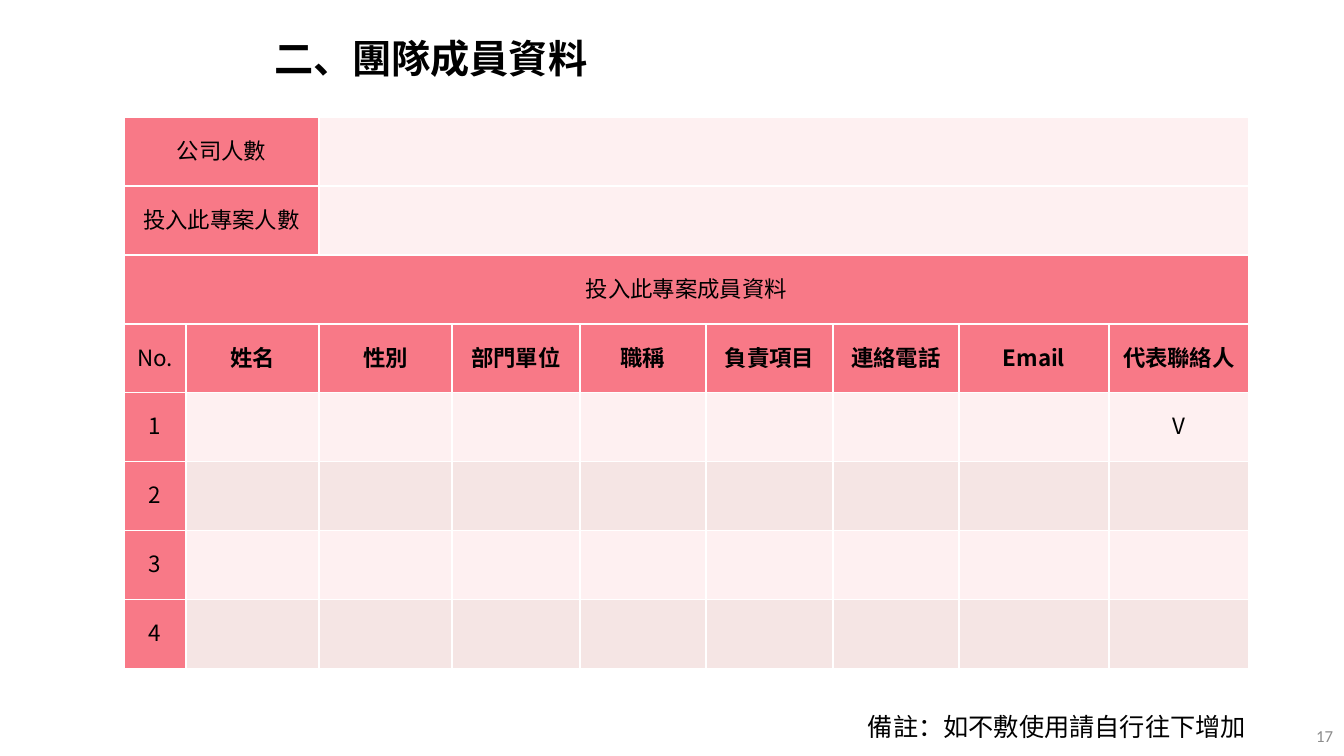
"""Build the team member information slide."""
from lxml.etree import SubElement
from pptx import Presentation
from pptx.dml.color import RGBColor
from pptx.enum.text import MSO_ANCHOR, MSO_AUTO_SIZE, PP_ALIGN
from pptx.oxml.ns import qn
from pptx.util import Emu, Pt

TITLE = "二、團隊成員資料"
NOTE = "備註：如不敷使用請自行往下增加"
PAGE_NUMBER = "17"
HEADCOUNTS = ["公司人數", "投入此專案人數"]
MEMBERS_HEADING = "投入此專案成員資料"
FIELDS = ["No.", "姓名", "性別", "部門單位", "職稱", "負責項目", "連絡電話", "Email", "代表聯絡人"]
MEMBERS = [[str(number)] + [""] * 8 for number in range(1, 5)]
MEMBERS[0][-1] = "V"

COLUMN_WIDTHS = [62, 133, 133, 128, 126, 127, 126, 150, 140]
ROW_HEIGHT = 69
CJK_FONT = "Noto Sans CJK SC"
COLORS = {
    "text": "000000",
    "page": "8C8C8C",
    "header": "F87987",
    "light": "FEF0F1",
    "dark": "F5E5E4",
    "border": "FFFFFF",
}


def px(length):
    return Emu(round(length * 12192000 / 1344))


def place(box, left, top, width, height):
    box.left, box.top, box.width, box.height = map(px, (left, top, width, height))


def write(frame, text, size, color="text", font=CJK_FONT, bold=False, align=PP_ALIGN.LEFT):
    frame.text = text
    paragraph = frame.paragraphs[0]
    paragraph.alignment = align
    for run in paragraph.runs:
        run.font.size = Pt(size)
        run.font.name = font
        run.font.bold = bold
        run.font.color.rgb = RGBColor.from_string(COLORS[color])
        SubElement(run.font._element, qn("a:ea"), typeface=font)
    return paragraph


def fit_on_one_line(frame):
    frame.word_wrap = False
    frame.auto_size = MSO_AUTO_SIZE.SHAPE_TO_FIT_TEXT
    frame.vertical_anchor = MSO_ANCHOR.TOP


def style_cell(cell, text, fill, bold):
    properties = cell._tc.get_or_add_tcPr()
    for side in ("lnL", "lnR", "lnT", "lnB"):
        line = SubElement(properties, qn(f"a:{side}"), w=str(Pt(1)))
        line_fill = SubElement(line, qn("a:solidFill"))
        SubElement(line_fill, qn("a:srgbClr"), val=COLORS["border"])
    cell.fill.solid()
    cell.fill.fore_color.rgb = RGBColor.from_string(COLORS[fill])
    cell.vertical_anchor = MSO_ANCHOR.MIDDLE
    cell.margin_top = cell.margin_bottom = 0
    if text:
        paragraph = write(cell.text_frame, text, 16, bold=bold, align=PP_ALIGN.CENTER)
        paragraph.line_spacing = Pt(20)
        paragraph.space_before = paragraph.space_after = Pt(6)


def add_members_table(slide):
    rows = [[label] + [""] * 8 for label in HEADCOUNTS]
    rows += [[MEMBERS_HEADING] + [""] * 8, FIELDS] + MEMBERS
    heading_row = len(HEADCOUNTS)
    fields_row = heading_row + 1
    last_column = len(FIELDS) - 1
    table = slide.shapes.add_table(
        len(rows), len(FIELDS), px(124), px(117),
        px(sum(COLUMN_WIDTHS)), px(ROW_HEIGHT * len(rows)),
    ).table
    table.first_row = table.horz_banding = False
    for column, width in zip(table.columns, COLUMN_WIDTHS):
        column.width = px(width)
    for r, values in enumerate(rows):
        table.rows[r].height = px(ROW_HEIGHT)
        band = "dark" if r > fields_row and (r - fields_row) % 2 == 0 else "light"
        for c, value in enumerate(values):
            is_header = c == 0 or r in (heading_row, fields_row) or (r < heading_row and c == 1)
            style_cell(table.cell(r, c), value, "header" if is_header else band,
                       r == fields_row and c > 0)
    for r in range(heading_row):
        table.cell(r, 0).merge(table.cell(r, 1))
        table.cell(r, 2).merge(table.cell(r, last_column))
    table.cell(heading_row, 0).merge(table.cell(heading_row, last_column))


def main():
    presentation = Presentation()
    presentation.slide_width, presentation.slide_height = px(1344), px(756)
    slide = presentation.slides.add_slide(presentation.slide_layouts[5])

    title = slide.shapes.title
    place(title, 264, 29, 337, 57)
    write(title.text_frame, TITLE, 28, bold=True)
    fit_on_one_line(title.text_frame)

    add_members_table(slide)

    page = slide.shapes.add_textbox(px(1041), px(716), px(302), px(40)).text_frame
    page.word_wrap = True
    page.vertical_anchor = MSO_ANCHOR.MIDDLE
    write(page, PAGE_NUMBER, 12, "page", "Calibri", align=PP_ALIGN.RIGHT)

    note = slide.shapes.add_textbox(px(858), px(706), px(402), px(40)).text_frame
    write(note, NOTE, 18)
    fit_on_one_line(note)

    presentation.save("out.pptx")


if __name__ == "__main__":
    main()
